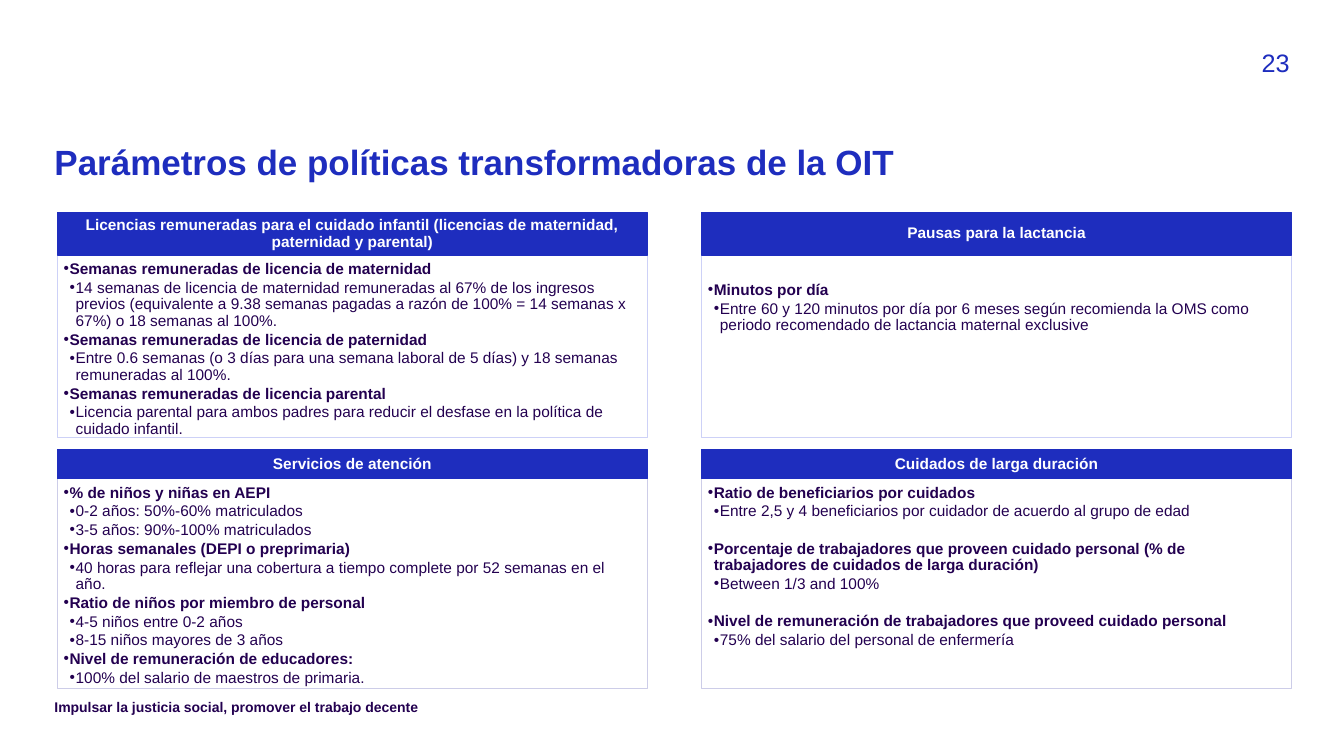
from dataclasses import dataclass

from lxml.etree import SubElement
from pptx import Presentation
from pptx.dml.color import RGBColor as Rgb
from pptx.enum.shapes import MSO_SHAPE as Form
from pptx.enum.text import MSO_ANCHOR as Anchor, MSO_AUTO_SIZE as Fit, PP_ALIGN as Align
from pptx.oxml.ns import qn
from pptx.util import Inches, Pt


@dataclass(frozen=True)
class Theme:
    font: str = "Arial"
    blue: str = "1E2DBE"
    ink: str = "230050"
    white: str = "FFFFFF"
    edges: tuple = ("CDD1F7", "CDCDE8")
    title: int = 25
    number: int = 18
    body: int = 11
    foot: int = 10


THEME = Theme()
WIDE, HIGH = 13.33, 7.5
EDGE = 0.54
SPAN = WIDE - 2 * EDGE
COL, GAP, START = 5.85, 0.54, 0.57
ROWS = ((2.11, 0.42, 1.81), (4.46, 0.29, 2.08))  # top, heading height, list height
STEP = 0.06
AFTER, BLANK = 1.5, 13.3
HEAD_PAD = (0.09, 0.05, 0.09, 0.05)
LIST_PAD = (0.06, 0.06, 0.09, 0.1)
LOW_PAD = (0.06, 0.27, 0.09, 0.1)

# Each panel: row, column, list insets, heading, topics.
# Each topic: its name, its points.
PANELS = (
    (0, 0, LIST_PAD,
     "Licencias remuneradas para el cuidado infantil (licencias de maternidad, paternidad y parental)", (
         ("Semanas remuneradas de licencia de maternidad",
          ("14 semanas de licencia de maternidad remuneradas al 67% de los ingresos previos (equivalente a "
           "9.38 semanas pagadas a razón de 100% = 14 semanas x 67%) o 18 semanas al 100%.",)),
         ("Semanas remuneradas de licencia de paternidad",
          ("Entre 0.6 semanas (o 3 días para una semana laboral de 5 días) y 18 semanas "
           "remuneradas al 100%.",)),
         ("Semanas remuneradas de licencia parental",
          ("Licencia parental para ambos padres para reducir el desfase en la política de "
           "cuidado infantil.",)),
     )),
    (0, 1, LOW_PAD, "Pausas para la lactancia", (
        ("Minutos por día",
         ("Entre 60 y 120 minutos por día por 6 meses según recomienda la OMS como periodo "
          "recomendado de lactancia maternal exclusive",)),
    )),
    (1, 0, LIST_PAD, "Servicios de atención", (
        ("% de niños y niñas en AEPI",
         ("0-2 años: 50%-60% matriculados", "3-5 años: 90%-100% matriculados")),
        ("Horas semanales (DEPI o preprimaria)",
         ("40 horas para reflejar una cobertura a tiempo complete por 52 semanas en el año.",)),
        ("Ratio de niños por miembro de personal",
         ("4-5 niños entre 0-2 años", "8-15 niños mayores de 3 años")),
        ("Nivel de remuneración de educadores:",
         ("100% del salario de maestros de primaria.",)),
    )),
    (1, 1, LIST_PAD, "Cuidados de larga duración", (
        ("Ratio de beneficiarios por cuidados",
         ("Entre 2,5 y 4 beneficiarios por cuidador de acuerdo al grupo de edad",)),
        ("Porcentaje de trabajadores que proveen cuidado personal "
         "(% de trabajadores de cuidados de larga duración)",
         ("Between 1/3 and 100%",)),
        ("Nivel de remuneración de trabajadores que proveed cuidado personal",
         ("75% del salario del personal de enfermería",)),
    )),
)


def place(shape, x, y, w, h):
    shape.left, shape.top, shape.width, shape.height = map(Inches, (x, y, w, h))


def frame(shape, pad=(0, 0, 0, 0), anchor=Anchor.TOP):
    """Set wrapping, insets and anchor, and return the text frame."""
    box = shape.text_frame
    box.word_wrap = True
    box.auto_size = Fit.NONE
    box.vertical_anchor = anchor
    box.margin_left, box.margin_top, box.margin_right, box.margin_bottom = map(Inches, pad)
    return box


def write(box, text, size=THEME.body, color=THEME.ink, bold=False, align=Align.LEFT,
          level=None, lead=0.9, before=0, after=0):
    """Fill the empty first paragraph or add one; a level makes it a bullet."""
    para = box.paragraphs[0]
    if para.runs:
        para = box.add_paragraph()
    if level is not None:
        para.level = level
        props = para._p.get_or_add_pPr()
        props.set("marL", str(Inches(STEP * (level + 1))))
        props.set("indent", str(-Inches(STEP)))
        SubElement(props, qn("a:buChar")).set("char", "•")
    para.alignment = align
    para.line_spacing = lead
    para.space_before, para.space_after = Pt(before), Pt(after)
    run = para.add_run()
    run.text = text
    font = run.font
    font.name, font.size, font.bold = THEME.font, Pt(size), bold
    font.color.rgb = Rgb.from_string(color)


def label(slide, spot, text, **style):
    shape = slide.shapes.add_textbox(0, 0, 0, 0)
    place(shape, *spot)
    write(frame(shape), text, **style)


def outline(shape, color):
    shape.line.color.rgb = Rgb.from_string(color)
    shape.line.width = Pt(1)


def heading(slide, spot, text):
    bar = slide.shapes.add_shape(Form.RECTANGLE, 0, 0, 0, 0)
    place(bar, *spot)
    bar.shadow.inherit = False
    bar.fill.solid()
    bar.fill.fore_color.rgb = Rgb.from_string(THEME.blue)
    outline(bar, THEME.blue)
    write(frame(bar, HEAD_PAD, Anchor.MIDDLE), text,
          color=THEME.white, bold=True, align=Align.CENTER)


def topics(holder, spot, edge, pad, items, spread):
    """Fill a body placeholder with bold topics and their points."""
    place(holder, *spot)
    outline(holder, edge)
    box = frame(holder, pad)
    for i, (name, points) in enumerate(items):
        write(box, name, bold=True, level=0, after=AFTER, before=BLANK if spread and i else 0)
        for point in points:
            write(box, point, level=1, after=AFTER)


def main():
    deck = Presentation()
    deck.slide_width, deck.slide_height = Inches(WIDE), Inches(HIGH)
    slide = deck.slides.add_slide(deck.slide_layouts.get_by_name("Comparison"))
    title = slide.shapes.title
    place(title, EDGE, 1.44, SPAN, 0.73)
    write(frame(title), "Parámetros de políticas transformadoras de la OIT",
          size=THEME.title, color=THEME.blue, bold=True)
    label(slide, (WIDE - EDGE - 0.59, 0.47, 0.59, 0.31), "23",
          size=THEME.number, color=THEME.blue, align=Align.RIGHT, lead=1)

    holders = [slide.placeholders[i] for i in range(1, 5)]
    for holder, (row, col, pad, text, items) in zip(holders, PANELS):
        top, head, body = ROWS[row]
        left = START + col * (COL + GAP)
        heading(slide, (left, top, COL, head), text)
        topics(holder, (left, top + head, COL, body), THEME.edges[row], pad, items,
               spread=row == col == 1)

    label(slide, (EDGE, 6.93, SPAN / 2, 0.2),
          "Impulsar la justicia social, promover el trabajo decente",
          size=THEME.foot, bold=True, lead=1)
    deck.save("out.pptx")


if __name__ == "__main__":
    main()
